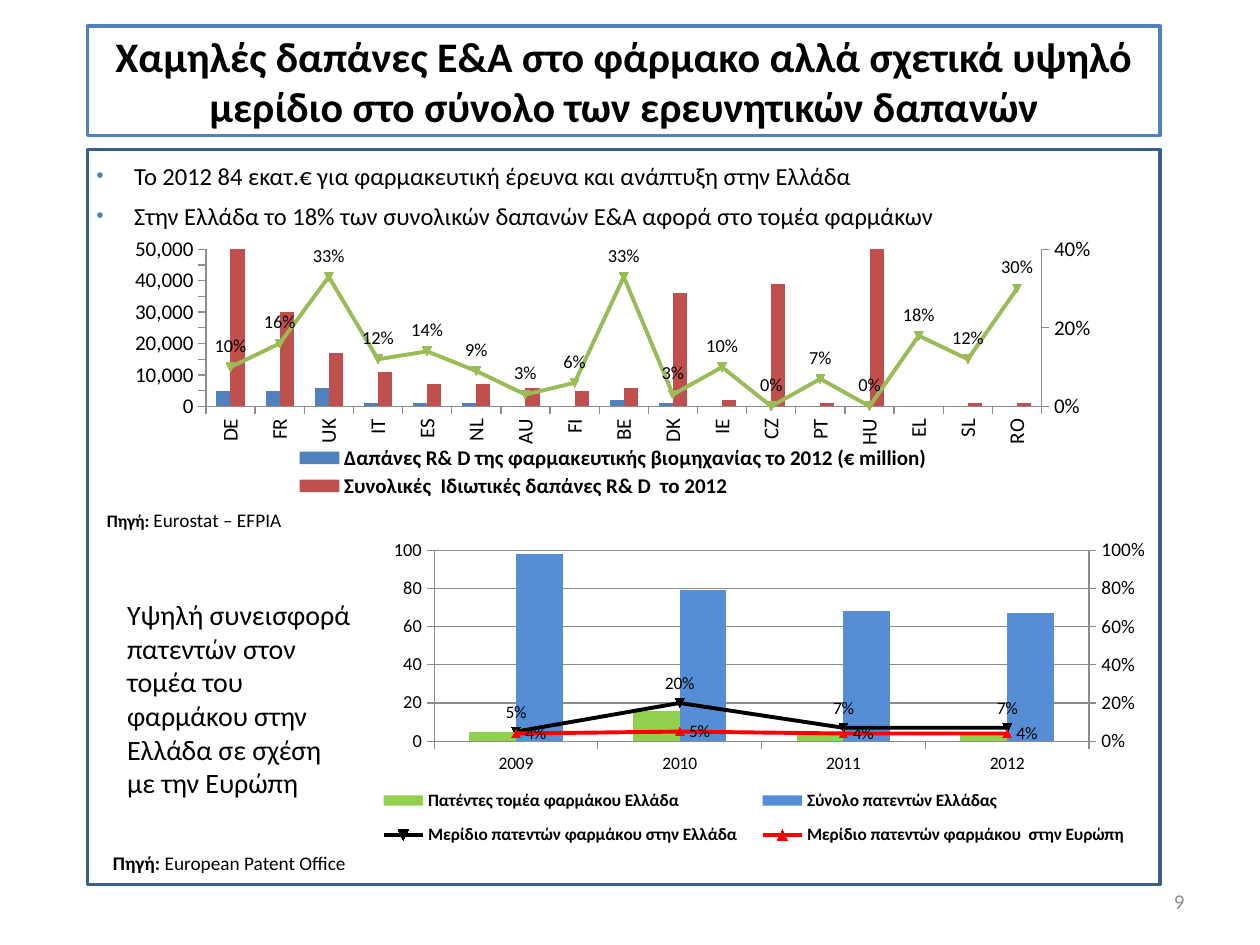
from dataclasses import dataclass, field
from typing import Any, Optional

from pptx import Presentation
from pptx.chart.axis import ValueAxis
from pptx.chart.data import CategoryChartData
from pptx.dml.color import RGBColor
from pptx.enum.chart import (XL_CHART_TYPE, XL_LABEL_POSITION, XL_LEGEND_POSITION,
                             XL_MARKER_STYLE, XL_TICK_MARK)
from pptx.enum.shapes import MSO_SHAPE
from pptx.enum.text import MSO_ANCHOR, PP_ALIGN
from pptx.oxml import parse_xml
from pptx.oxml.ns import nsdecls, qn
from pptx.util import Pt

BARS = XL_CHART_TYPE.COLUMN_CLUSTERED
ABOVE, RIGHT = XL_LABEL_POSITION.ABOVE, XL_LABEL_POSITION.RIGHT
BOTTOM = XL_LEGEND_POSITION.BOTTOM
AUTO = XL_MARKER_STYLE.AUTOMATIC
OUT, NONE = XL_TICK_MARK.OUTSIDE, XL_TICK_MARK.NONE
RECT = MSO_SHAPE.RECTANGLE
MIDDLE = MSO_ANCHOR.MIDDLE
CENTER, END = PP_ALIGN.CENTER, PP_ALIGN.RIGHT

BLACK = RGBColor(0, 0, 0)
WHITE = RGBColor(0xFF, 0xFF, 0xFF)
BLUE = RGBColor(0x4F, 0x81, 0xBD)
NAVY = RGBColor(0x3A, 0x5F, 0x8C)
SKY = RGBColor(0x55, 0x8E, 0xD5)
BRICK = RGBColor(0xC0, 0x50, 0x4D)
OLIVE = RGBColor(0x9B, 0xBB, 0x59)
LIME = RGBColor(0x92, 0xD0, 0x50)
RED = RGBColor(0xFF, 0, 0)
GREY = RGBColor(0x8C, 0x8C, 0x8C)
FONT = "Calibri"
Box = tuple[float, float, float, float]


@dataclass
class Run:
    text: str
    size: float
    bold: bool = False
    color: RGBColor = BLACK


@dataclass
class Note:
    box: Box
    lines: list[list[Run]]
    frame: dict[str, Any] = field(default_factory=dict)
    para: dict[str, Any] = field(default_factory=dict)
    bullet: bool = False


@dataclass
class Row:
    name: str
    vals: list[float]
    color: RGBColor
    place: Optional[Any] = None


@dataclass
class Scale:
    top: float
    step: float
    mask: str
    size: float


@dataclass
class Graph:
    box: Box
    cats: list[str]
    rows: list[Row]
    left: Scale
    right: Scale
    plot: Box
    key: Box
    small: float
    label: float
    bold: float
    grid: bool = False
    turn: bool = False
    hide: Optional[int] = None


def put(item: Any, vals: dict[str, Any]) -> None:
    for name, val in vals.items():
        setattr(item, name, val)


def ink(font: Any, size: float, bold: bool = False, color: RGBColor = BLACK) -> None:
    put(font, {"name": FONT, "size": Pt(size), "bold": bold})
    font.color.rgb = color


def paint(fill: Any, color: RGBColor) -> None:
    fill.solid()
    fill.fore_color.rgb = color


def write(frame: Any, note: Note) -> None:
    put(frame, {"word_wrap": True, **note.frame})
    for num, line in enumerate(note.lines):
        para = frame.add_paragraph() if num else frame.paragraphs[0]
        put(para, note.para)
        if note.bullet:
            props = para._p.get_or_add_pPr()
            props.set("marL", str(Pt(21.6)))
            props.set("indent", str(-Pt(21.6)))
            for part in (f'<a:buClr {nsdecls("a")}><a:srgbClr val="{BLUE}"/></a:buClr>',
                         f'<a:buSzPct {nsdecls("a")} val="85000"/>',
                         f'<a:buFont {nsdecls("a")} typeface="Arial"/>',
                         f'<a:buChar {nsdecls("a")} char="•"/>'):
                props.append(parse_xml(part))
        for bit in line:
            run = para.add_run()
            run.text = bit.text
            ink(run.font, bit.size, bit.bold, bit.color)


def add_note(slide: Any, note: Note) -> None:
    write(slide.shapes.add_textbox(*map(Pt, note.box)).text_frame, note)


def add_panel(slide: Any, box: Box, edge: RGBColor, fill: Optional[RGBColor] = None) -> Any:
    shape = slide.shapes.add_shape(RECT, *map(Pt, box))
    shape.shadow.inherit = False
    if fill is None:
        shape.fill.background()
    else:
        paint(shape.fill, fill)
    shape.line.color.rgb = edge
    shape.line.width = Pt(2)
    return shape


def layout(box: Box, inner: bool = False) -> Any:
    target = '<c:layoutTarget val="inner"/>' if inner else ""
    sizes = "".join(f'<c:{tag} val="{val}"/>' for tag, val in zip("xywh", box))
    return parse_xml(f'<c:layout {nsdecls("c")}><c:manualLayout>{target}<c:xMode val="edge"/>'
                     f'<c:yMode val="edge"/>{sizes}</c:manualLayout></c:layout>')


def drop(node: Any, tag: str) -> None:
    for child in node.findall(qn(tag)):
        node.remove(child)


def split(area: Any, rows: list[Row]) -> list[ValueAxis]:
    bars = area.find(qn("c:barChart"))
    lines = parse_xml(f'<c:lineChart {nsdecls("c")}><c:grouping val="standard"/>'
                      '<c:varyColors val="0"/><c:marker val="1"/>'
                      '<c:axId val="501"/><c:axId val="502"/></c:lineChart>')
    mark = lines.find(qn("c:marker"))
    for node, row in zip(bars.findall(qn("c:ser")), rows):
        if row.place is not None:
            drop(node, "c:invertIfNegative")
            mark.addprevious(node)
    bars.addnext(lines)
    last = area.find(qn("c:valAx"))
    for tag, own, other, gone, side, cross in (("valAx", 502, 501, 0, "r", "max"),
                                               ("catAx", 501, 502, 1, "b", "autoZero")):
        last.addnext(parse_xml(
            f'<c:{tag} {nsdecls("c")}><c:axId val="{own}"/>'
            '<c:scaling><c:orientation val="minMax"/></c:scaling>'
            f'<c:delete val="{gone}"/><c:axPos val="{side}"/><c:majorTickMark val="out"/>'
            '<c:minorTickMark val="none"/><c:tickLblPos val="nextTo"/>'
            f'<c:crossAx val="{other}"/><c:crosses val="{cross}"/></c:{tag}>'))
    return [ValueAxis(node) for node in area.findall(qn("c:valAx"))]


def set_scale(axis: Any, scale: Scale) -> None:
    put(axis, {"minimum_scale": 0, "maximum_scale": scale.top, "major_unit": scale.step})
    put(axis.tick_labels, {"number_format": scale.mask, "number_format_is_linked": False})
    ink(axis.tick_labels.font, scale.size)


def add_graph(slide: Any, graph: Graph) -> None:
    data = CategoryChartData()
    data.categories = graph.cats
    for row in graph.rows:
        data.add_series(row.name, row.vals)
    chart = slide.shapes.add_chart(BARS, *map(Pt, graph.box), data).chart
    put(chart, {"has_title": False, "has_legend": True})
    ink(chart.font, 12)
    area, base = chart._chartSpace.chart.plotArea, chart.category_axis
    left, right = split(area, graph.rows)
    set_scale(left, graph.left)
    set_scale(right, graph.right)
    ink(base.tick_labels.font, graph.small)
    for axis in (left, right, base):
        put(axis, {"major_tick_mark": OUT, "minor_tick_mark": NONE, "has_major_gridlines": False})
        axis.format.line.color.rgb = GREY
    if graph.grid:
        left.major_gridlines.format.line.color.rgb = GREY
    if graph.turn:
        base._element.find(f'{qn("c:txPr")}/{qn("a:bodyPr")}').set("rot", "-5400000")
    put(chart.plots[0], {"gap_width": 150, "overlap": 0, "vary_by_categories": False})
    for item, row in zip(chart.series, graph.rows):
        if row.place is None:
            paint(item.format.fill, row.color)
            continue
        item.smooth = False
        put(item.marker, {"style": AUTO, "size": 5})
        item.format.line.width = Pt(2.25)
        for part in (item, item.marker):
            part.format.line.color.rgb = row.color
        paint(item.marker.format.fill, row.color)
        put(item.data_labels, {"show_value": True, "position": row.place,
                               "number_format": "0%", "number_format_is_linked": False})
        ink(item.data_labels.font, graph.label)
    drop(area, "c:layout")
    area.insert(0, layout(graph.plot, True))
    key = chart.legend
    put(key, {"position": BOTTOM, "include_in_layout": False})
    ink(key.font, graph.bold, True)
    drop(key._element, "c:layout")
    spot = key._element.find(qn("c:legendPos"))
    spot.addnext(layout(graph.key))
    if graph.hide is not None:
        spot.addnext(parse_xml(f'<c:legendEntry {nsdecls("c")}><c:idx val="{graph.hide}"/>'
                               '<c:delete val="1"/></c:legendEntry>'))


TITLE = Note((50, 15, 613, 62.5), [[Run(
    "Χαμηλές δαπάνες Ε&Α στο φάρμακο αλλά σχετικά υψηλό μερίδιο στο σύνολο των ερευνητικών δαπανών",
    24, True)]], {"vertical_anchor": MIDDLE}, {"alignment": CENTER})
POINTS = Note((48, 88.5, 613, 47.5), [
    [Run("Το 2012 84 εκατ.€ για φαρμακευτική έρευνα και ανάπτυξη στην Ελλάδα", 14)],
    [Run("Στην Ελλάδα το 18% των συνολικών δαπανών Ε&Α αφορά στο τομέα φαρμάκων", 14)]],
    para={"space_before": Pt(5.8)}, bullet=True)
CLAIM = Note((65.5, 338, 142, 143), [[Run(
    "Υψηλή συνεισφορά πατεντών στον τομέα του φαρμάκου στην Ελλάδα σε σχέση με την Ευρώπη", 16)]])
PAGE = Note((516, 500.5, 168, 29), [[Run("9", 12, color=GREY)]],
            {"vertical_anchor": MIDDLE}, {"alignment": END})
PATENT = Note((57.5, 485, 280, 19), [[Run("Πηγή: ", 11, True), Run("European Patent Office", 11)]],
              para={"line_spacing": 0.85})
STATS = Note((54, 287, 115, 21), [[Run("Πηγή: ", 10, True), Run("Eurostat – EFPIA", 11)]],
             {"word_wrap": False})
SPEND = Graph(
    (52, 135, 597, 187), "DE FR UK IT ES NL AU FI BE DK IE CZ PT HU EL SL RO".split(), [
        Row("Δαπάνες R& D της φαρμακευτικής βιομηχανίας το 2012 (€ million)",
            [5000, 5000, 6000, 1000, 1000, 1000, 0, 0, 2000, 1000, 0, 0, 0, 0, 0, 0, 0], BLUE),
        Row("Συνολικές  Ιδιωτικές δαπάνες R& D  το 2012",
            [52000, 30000, 17000, 11000, 7000, 7000, 6000, 5000, 6000, 36000, 2000, 39000,
             1000, 239000, 0, 1000, 1000], BRICK),
        Row("Λόγος", [0.1, 0.16, 0.33, 0.12, 0.14, 0.09, 0.03, 0.06, 0.33, 0.03, 0.1, 0,
                      0.07, 0, 0.18, 0.12, 0.3], OLIVE, ABOVE)],
    Scale(50000, 5000, "#,##0", 12), Scale(0.4, 0.2, "0%", 12),
    (0.11, 0.04, 0.8, 0.48), (0.19, 0.63, 0.62, 0.18), 12, 10.5, 12, turn=True, hide=2)
SHARE = Graph(
    (208, 304.5, 446.5, 198.5), ["2009", "2010", "2011", "2012"], [
        Row("Πατέντες τομέα φαρμάκου Ελλάδα", [5, 16, 5, 5], LIME),
        Row("Σύνολο πατεντών Ελλάδας", [98, 79, 68, 67], SKY),
        Row("Μερίδιο πατεντών φαρμάκου στην Ελλάδα", [0.05, 0.2, 0.07, 0.07], BLACK, ABOVE),
        Row("Μερίδιο πατεντών φαρμάκου  στην Ευρώπη", [0.04, 0.05, 0.04, 0.04], RED, RIGHT)],
    Scale(100, 20, "General", 10.5), Scale(1, 0.2, "0%", 11),
    (0.09, 0.05, 0.84, 0.55), (0, 0.7, 1, 0.24), 10, 10, 9.9, grid=True)


def main() -> None:
    deck = Presentation()
    put(deck, {"slide_width": Pt(720), "slide_height": Pt(540)})
    slide = deck.slides.add_slide(deck.slide_layouts[6])
    write(add_panel(slide, TITLE.box, BLUE, WHITE).text_frame, TITLE)
    add_graph(slide, SPEND)
    for note in (POINTS, CLAIM, PAGE):
        add_note(slide, note)
    add_panel(slide, (50, 85.5, 613, 420), NAVY)
    add_note(slide, PATENT)
    add_graph(slide, SHARE)
    add_note(slide, STATS)
    deck.save("out.pptx")


if __name__ == "__main__":
    main()
